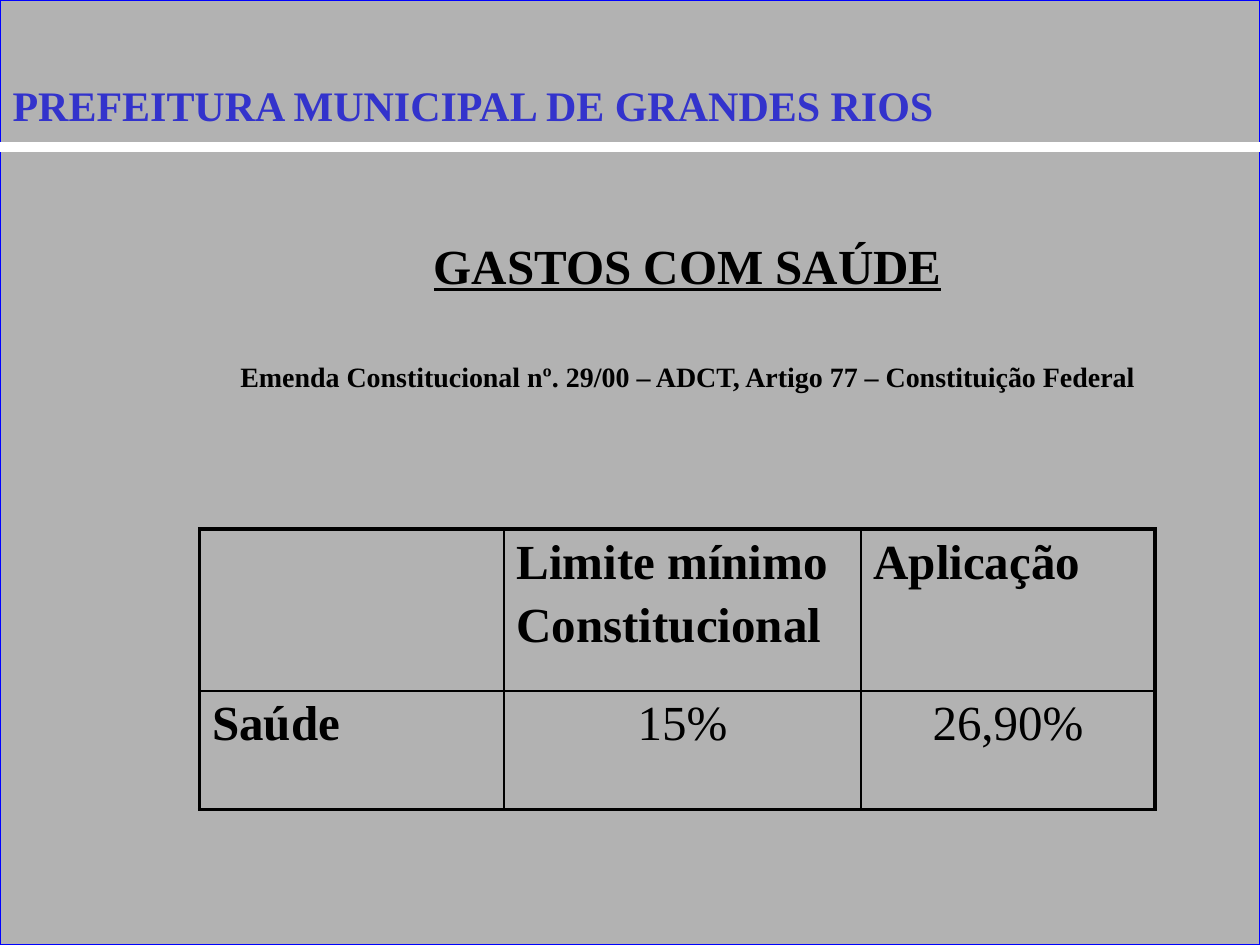
from dataclasses import dataclass

from lxml.etree import SubElement
from pptx import Presentation
from pptx.dml.color import RGBColor
from pptx.enum.shapes import MSO_CONNECTOR, MSO_SHAPE
from pptx.enum.text import MSO_ANCHOR, MSO_AUTO_SIZE, PP_ALIGN
from pptx.oxml import parse_xml
from pptx.oxml.ns import nsdecls, qn
from pptx.util import Inches, Pt

COLORS = {"panel": "B2B2B2", "frame": "0000FF", "rule": "FFFFFF",
          "ink": "000000", "header": "3333CC", "shadow": "808080"}
FONT = "Times New Roman"
COLUMNS, ROWS = 120, 90
WIDTH, HEIGHT = Inches(10), Inches(7.5)
THICK, THIN = 2.25, 1


@dataclass(frozen=True)
class Box:
    col: float
    row: float
    cols: float
    rows: float

    def place(self) -> tuple:
        return x(self.col), y(self.row), x(self.cols), y(self.rows)


@dataclass(frozen=True)
class Cell:
    lines: tuple = ()
    bold: bool = True
    align: PP_ALIGN = PP_ALIGN.LEFT


def x(cols: float) -> int:
    return round(WIDTH * cols / COLUMNS)


def y(rows: float) -> int:
    return round(HEIGHT * rows / ROWS)


def rgb(name: str) -> RGBColor:
    return RGBColor.from_string(COLORS[name])


def add_run(p, text: str, size: float, color: str = "ink", bold: bool = True,
            underline: bool = False):
    r = p.add_run()
    r.text = text
    r.font.size = Pt(size)
    r.font.bold = bold
    r.font.underline = underline
    r.font.color.rgb = rgb(color)
    r.font.name = FONT
    return r


def add_background(s) -> None:
    panel = s.shapes.add_shape(MSO_SHAPE.RECTANGLE, *Box(0, 0, COLUMNS, ROWS).place())
    panel.shadow.inherit = False
    panel.fill.solid()
    panel.fill.fore_color.rgb = rgb("panel")
    panel.line.color.rgb = rgb("frame")
    panel.line.width = Pt(0.75)
    rule = s.shapes.add_connector(MSO_CONNECTOR.STRAIGHT, 0, y(14), WIDTH, y(14))
    rule.line.color.rgb = rgb("rule")
    rule.line.width = Pt(6)
    SubElement(rule._element.spPr, qn("a:effectLst"))


def add_header(s, box: Box, text: str) -> None:
    title = s.shapes.title
    s.shapes._spTree.append(title._element)
    title.left, title.top, title.width, title.height = box.place()
    tf = title.text_frame
    tf.word_wrap = True
    tf.auto_size = MSO_AUTO_SIZE.NONE
    tf.vertical_anchor = MSO_ANCHOR.BOTTOM
    p = tf.paragraphs[0]
    p.alignment = PP_ALIGN.LEFT
    r = add_run(p, text, 24, "header")
    r.font.fill._xPr.find(qn("a:solidFill")).addnext(parse_xml(
        f'<a:effectLst {nsdecls("a")}><a:outerShdw dist="35921" dir="2700000">'
        f'<a:srgbClr val="{COLORS["shadow"]}"/></a:outerShdw></a:effectLst>'))


def add_subject(s, box: Box, heading: str, basis: str) -> None:
    tf = s.shapes.add_textbox(*box.place()).text_frame
    tf.word_wrap = True
    first, second = tf.paragraphs[0], tf.add_paragraph()
    for p in (first, second):
        p.alignment = PP_ALIGN.CENTER
        p.line_spacing = 1.5
    second.space_before = Pt(28)
    add_run(first, heading, 28, underline=True)
    add_run(second, basis, 16)


def set_border(cell, side: str, width: float) -> None:
    line = SubElement(cell._tc.get_or_add_tcPr(), qn(f"a:ln{side}"), w=str(Pt(width)))
    fill = SubElement(line, qn("a:solidFill"))
    SubElement(fill, qn("a:srgbClr"), val=COLORS["ink"])


def fill_cell(cell, content: Cell) -> None:
    tf = cell.text_frame
    for i, text in enumerate(content.lines):
        p = tf.add_paragraph() if i else tf.paragraphs[0]
        p.alignment = content.align
        p.space_before = Pt(5)
        add_run(p, text, 28, bold=content.bold)


def add_grid(s, left: float, top: float, widths: list, heights: list, cells: list) -> None:
    box = Box(left, top, sum(widths), sum(heights))
    table = s.shapes.add_table(len(heights), len(widths), *box.place()).table
    table.first_row = table.horz_banding = False
    for column, width in zip(table.columns, widths):
        column.width = x(width)
    for row, height in zip(table.rows, heights):
        row.height = y(height)
    for i, contents in enumerate(cells):
        for j, content in enumerate(contents):
            cell = table.cell(i, j)
            fill_cell(cell, content)
            outer = {"L": j == 0, "R": j == len(widths) - 1,
                     "T": i == 0, "B": i == len(heights) - 1}
            for side, is_outer in outer.items():
                set_border(cell, side, THICK if is_outer else THIN)
            cell.fill.background()


def main() -> None:
    prs = Presentation()
    prs.slide_width, prs.slide_height = WIDTH, HEIGHT
    s = prs.slides.add_slide(prs.slide_layouts[5])
    add_background(s)
    add_subject(s, Box(17, 19, 97, 71), "GASTOS COM SAÚDE",
                "Emenda Constitucional nº. 29/00 – ADCT, Artigo 77 – Constituição Federal")
    add_grid(s, 19, 50.4, [29, 34, 28], [15.4, 11.3], [
        [Cell(), Cell(("Limite mínimo", "Constitucional")), Cell(("Aplicação",))],
        [Cell(("Saúde",)), Cell(("15%",), False, PP_ALIGN.CENTER),
         Cell(("26,90%",), False, PP_ALIGN.CENTER)],
    ])
    add_header(s, Box(0, 7, 98.8, 6), "PREFEITURA MUNICIPAL DE GRANDES RIOS")
    prs.save("out.pptx")


if __name__ == "__main__":
    main()
